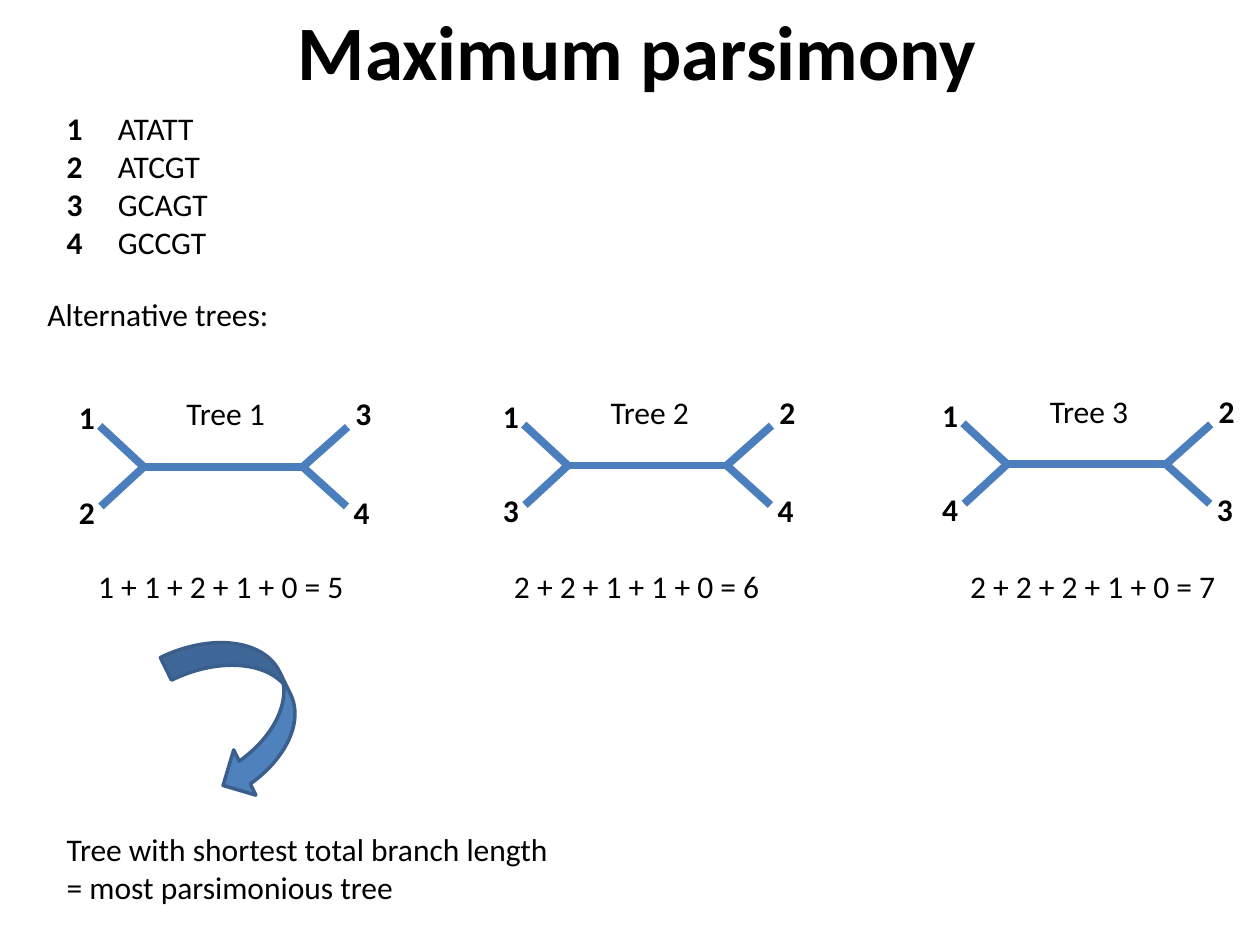
"""Builds a slide comparing three unrooted trees by maximum parsimony."""
from lxml import etree
from pptx import Presentation
from pptx.dml.color import RGBColor
from pptx.enum.shapes import MSO_CONNECTOR, MSO_SHAPE
from pptx.enum.text import MSO_ANCHOR, MSO_AUTO_SIZE, PP_ALIGN
from pptx.oxml.ns import qn
from pptx.util import Pt

STRAIGHT = MSO_CONNECTOR.STRAIGHT
CURVED_ARROW = MSO_SHAPE.CURVED_DOWN_ARROW
FIT_SHAPE, NO_FIT = MSO_AUTO_SIZE.SHAPE_TO_FIT_TEXT, MSO_AUTO_SIZE.NONE
MIDDLE, CENTER = MSO_ANCHOR.MIDDLE, PP_ALIGN.CENTER

FONT = "Calibri"
BLACK, BRANCH, FILL, OUTLINE = "000000", "4B7EBC", "4F81BD", "3A5F8C"

TITLE = "Maximum parsimony"
SEQUENCES = [("1", "ATATT"), ("2", "ATCGT"), ("3", "GCAGT"), ("4", "GCCGT")]
CONCLUSION = ["Tree with shortest total branch length", "= most parsimonious tree"]
TREES = [
    {"name": "Tree 1", "leaves": "1234", "origin": (57, 243.4),
     "sum": "1 + 1 + 2 + 1 + 0 = 5", "sum_left": 49},
    {"name": "Tree 2", "leaves": "1324", "origin": (299.3, 242.6),
     "sum": "2 + 2 + 1 + 1 + 0 = 6", "sum_left": 286.6},
    {"name": "Tree 3", "leaves": "1423", "origin": (550.3, 241.9),
     "sum": "2 + 2 + 2 + 1 + 0 = 7", "sum_left": 547.2},
]

LEFT_JOINT, RIGHT_JOINT = (25.2, 23.4), (116, 23.4)
BRANCHES = [
    (LEFT_JOINT, RIGHT_JOINT),
    ((0, 0), LEFT_JOINT),
    ((0.7, 46), LEFT_JOINT),
    (RIGHT_JOINT, (141.6, 0.6)),
    (RIGHT_JOINT, (141, 46)),
]
LEAF_SPOTS = [(-19, -19.4), (-19, 34.6), (139, -21.6), (138, 34.6)]
NAME_SPOT = (42.5, -21.6)
SUM_TOP = 320.4
LINE_HEIGHT = 29
SEQUENCE_INDENT = 29.3


def color(hex_text):
    return RGBColor.from_string(hex_text)


def shift(origin, offset):
    return origin[0] + offset[0], origin[1] + offset[1]


def add_span(para, text, bold=False, size=18):
    span = para.add_run()
    span.text = text
    span.font.name = FONT
    span.font.size = Pt(size)
    span.font.bold = bold
    span.font.color.rgb = color(BLACK)


def add_text(page, place, width, height, lines, wrap=False):
    """Adds a text box; each line is a list of (text, bold) pairs."""
    box = page.shapes.add_textbox(Pt(place[0]), Pt(place[1]), Pt(width), Pt(height))
    frame = box.text_frame
    frame.word_wrap = wrap
    frame.auto_size = FIT_SHAPE
    for index, line in enumerate(lines):
        para = frame.add_paragraph() if index else frame.paragraphs[0]
        for text, bold in line:
            add_span(para, text, bold)
    return box


def add_branch(page, start, end):
    branch = page.shapes.add_connector(STRAIGHT, *map(Pt, start + end))
    branch.line.color.rgb = color(BRANCH)
    branch.line.width = Pt(4.5)
    etree.SubElement(branch._element.spPr, qn("a:effectLst"))


def add_tree(page, tree):
    origin = tree["origin"]
    for start, end in BRANCHES:
        add_branch(page, shift(origin, start), shift(origin, end))
    for leaf, spot in zip(tree["leaves"], LEAF_SPOTS):
        add_text(page, shift(origin, spot), 23.8, LINE_HEIGHT, [[(leaf, True)]])
    add_text(page, shift(origin, NAME_SPOT), 59.8, LINE_HEIGHT, [[(tree["name"], False)]])
    add_text(page, (tree["sum_left"], SUM_TOP), 157, LINE_HEIGHT, [[(tree["sum"], False)]])


def add_title(page):
    title = page.shapes.title
    title.left, title.top, title.width, title.height = map(Pt, (161.3, -2, 406, 60.5))
    frame = title.text_frame
    frame.word_wrap = False
    frame.auto_size = NO_FIT
    frame.vertical_anchor = MIDDLE
    frame.paragraphs[0].alignment = CENTER
    add_span(frame.paragraphs[0], TITLE, True, 44)


def add_sequences(page):
    lines = [[(number, True), ("\t" + bases, False)] for number, bases in SEQUENCES]
    box = add_text(page, (31, 59), 98, 94.5, lines, True)
    for para in box.text_frame.paragraphs:
        properties = para._p.get_or_add_pPr()
        properties.set("marL", str(Pt(SEQUENCE_INDENT)))
        properties.set("indent", str(-Pt(SEQUENCE_INDENT)))


def add_arrow(page):
    arrow = page.shapes.add_shape(CURVED_ARROW, *map(Pt, (90.7, 377.3, 95.8, 57.6)))
    arrow.rotation = 63.9
    arrow.shadow.inherit = False
    arrow.fill.solid()
    arrow.fill.fore_color.rgb = color(FILL)
    arrow.line.color.rgb = color(OUTLINE)
    arrow.line.width = Pt(2)


def main():
    deck = Presentation()
    deck.slide_width, deck.slide_height = Pt(720), Pt(540)
    page = deck.slides.add_slide(deck.slide_layouts[5])
    add_title(page)
    add_sequences(page)
    add_text(page, (20, 165), 142.6, LINE_HEIGHT, [[("Alternative trees:", False)]])
    for tree in TREES:
        add_tree(page, tree)
    add_arrow(page)
    add_text(page, (31, 471), 293, 51, [[(line, False)] for line in CONCLUSION])
    deck.save("out.pptx")


if __name__ == "__main__":
    main()
